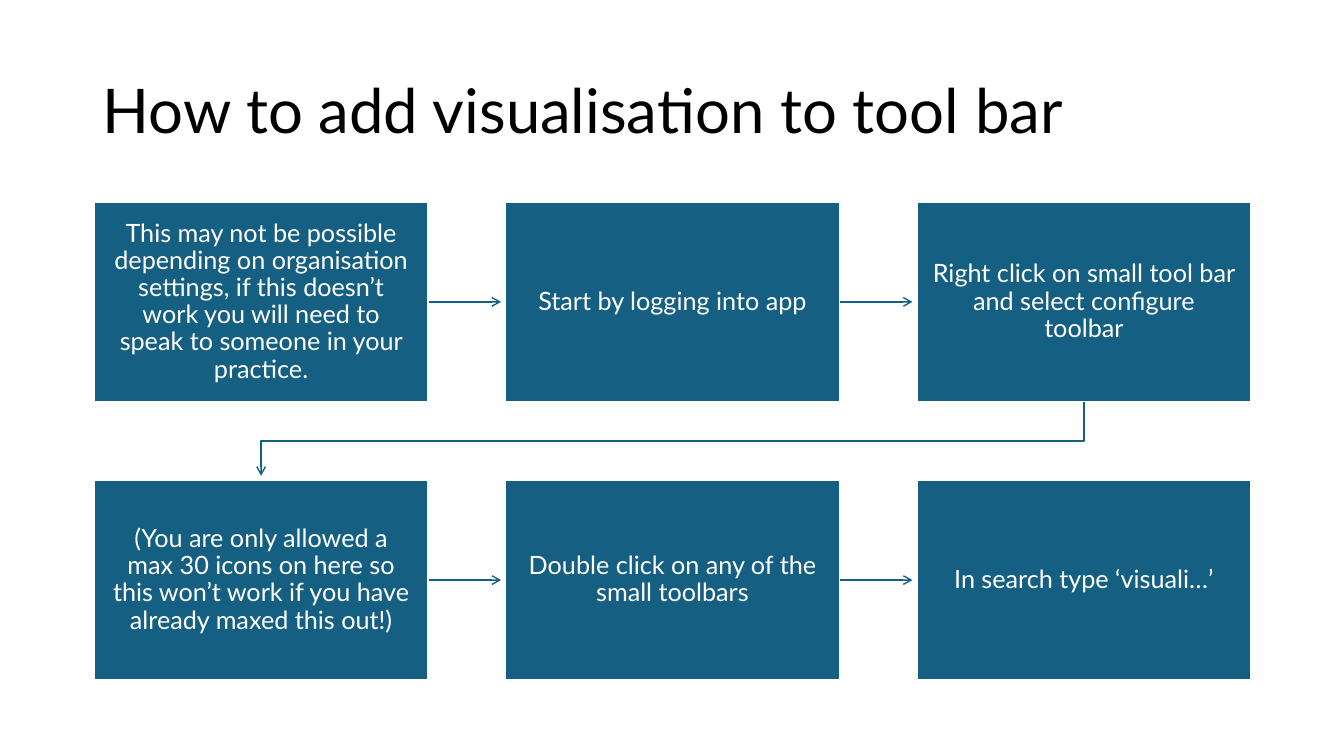
import pptx
import pptx.dml.color
import pptx.enum.shapes
import pptx.enum.text
import pptx.oxml
import pptx.util
from pptx.util import Inches

BLUE = pptx.dml.color.RGBColor(0x15, 0x60, 0x82)
WHITE = pptx.dml.color.RGBColor(0xFF, 0xFF, 0xFF)
BLACK = pptx.dml.color.RGBColor(0x00, 0x00, 0x00)
FONT = "Lato"

COLUMNS = 3
LEFT, TOP = 0.93, 2.0
BOX_W, BOX_H = 3.32, 1.99
PITCH_X, PITCH_Y = 4.08, 2.76
TIP_GAP = 0.04

STEPS = [
    "This may not be possible depending on organisation settings, if this "
    "doesn’t work you will need to speak to someone in your practice.",
    "Start by logging into app",
    "Right click on small tool bar and select configure toolbar",
    "(You are only allowed a max 30 icons on here so this won’t work if you "
    "have already maxed this out!)",
    "Double click on any of the small toolbars",
    "In search type ‘visuali…’",
]


def write_text(sp, text, size, color, align):
    tf = sp.text_frame
    tf.word_wrap = True
    tf.vertical_anchor = pptx.enum.text.MSO_ANCHOR.MIDDLE
    p = tf.paragraphs[0]
    p.alignment = align
    p.line_spacing = 0.9
    r = p.add_run()
    r.text = text
    r.font.name = FONT
    r.font.size = pptx.util.Pt(size)
    r.font.color.rgb = color


def add_title(slide, text):
    sp = slide.shapes.add_textbox(
        Inches(0.92), Inches(0.4), Inches(11.5), Inches(1.45))
    write_text(sp, text, 44, BLACK, pptx.enum.text.PP_ALIGN.LEFT)


def add_step(slide, index, text):
    row, col = divmod(index, COLUMNS)
    sp = slide.shapes.add_shape(
        pptx.enum.shapes.MSO_SHAPE.RECTANGLE,
        Inches(LEFT + col * PITCH_X), Inches(TOP + row * PITCH_Y),
        Inches(BOX_W), Inches(BOX_H))
    sp.shadow.inherit = False
    sp.fill.solid()
    sp.fill.fore_color.rgb = BLUE
    sp.line.color.rgb = WHITE
    sp.line.width = pptx.util.Pt(1.5)
    tf = sp.text_frame
    tf.margin_left = tf.margin_right = Inches(0.16)
    tf.margin_top = tf.margin_bottom = Inches(0.17)
    write_text(sp, text, 18, WHITE, pptx.enum.text.PP_ALIGN.CENTER)
    return sp


def style_arrow(sp):
    """Give a connector or open path a thin blue line with an arrowhead."""
    sp.line.color.rgb = BLUE
    sp.line.width = pptx.util.Pt(1)
    spPr = sp.element.spPr
    ln = spPr.find(pptx.oxml.ns.qn("a:ln"))
    tail = pptx.oxml.xmlchemy.OxmlElement("a:tailEnd")
    tail.set("type", "arrow")
    ln.append(tail)
    spPr.append(pptx.oxml.xmlchemy.OxmlElement("a:effectLst"))


def add_arrow_right(slide, source, target):
    """Run from the source's right side to just short of the target."""
    y = source.top + source.height // 2
    cxn = slide.shapes.add_connector(
        pptx.enum.shapes.MSO_CONNECTOR.STRAIGHT,
        source.left + source.width, y, target.left - Inches(TIP_GAP), y)
    cxn.begin_connect(source, 3)
    style_arrow(cxn)


def add_row_return(slide, source, target):
    """Run from the end of one row down and back to the start of the next."""
    start_x = source.left + source.width // 2
    end_x = target.left + target.width // 2
    start_y = source.top + source.height
    middle_y = (start_y + target.top) // 2
    builder = slide.shapes.build_freeform(start_x, start_y)
    builder.add_line_segments(
        [(start_x, middle_y), (end_x, middle_y),
         (end_x, target.top - Inches(TIP_GAP))], close=False)
    sp = builder.convert_to_shape()
    sp.fill.background()
    style_arrow(sp)


def main():
    prs = pptx.Presentation()
    prs.slide_width = Inches(13.33)
    prs.slide_height = Inches(7.5)
    slide = prs.slides.add_slide(prs.slide_layouts[6])

    add_title(slide, "How to add visualisation to tool bar")
    boxes = [add_step(slide, i, text) for i, text in enumerate(STEPS)]
    for i, (source, target) in enumerate(zip(boxes, boxes[1:]), start=1):
        if i % COLUMNS:
            add_arrow_right(slide, source, target)
        else:
            add_row_return(slide, source, target)

    prs.save("out.pptx")


if __name__ == "__main__":
    main()
